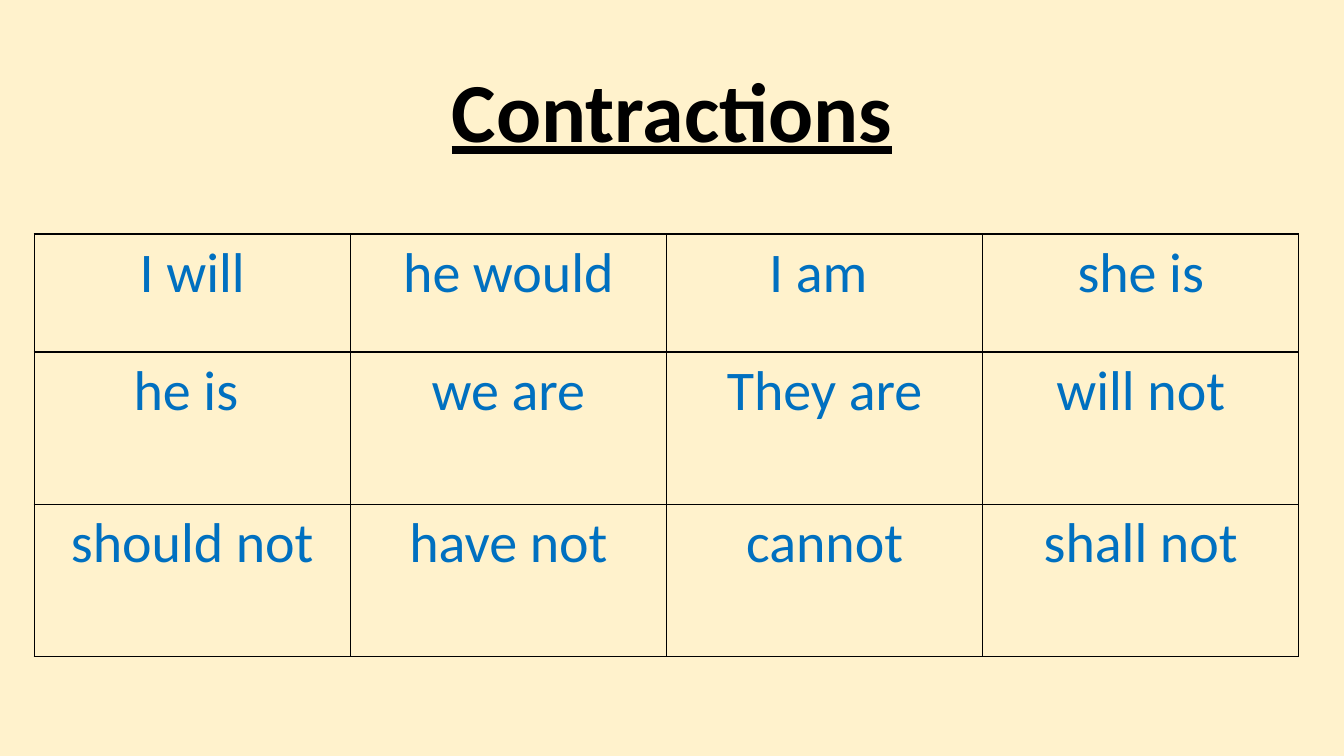
from lxml.etree import SubElement
from pptx import Presentation
from pptx.dml.color import RGBColor
from pptx.enum.text import MSO_AUTO_SIZE, PP_ALIGN
from pptx.oxml.ns import qn
from pptx.util import Pt

CREAM = RGBColor(0xFF, 0xF2, 0xCC)
BLACK = RGBColor(0x00, 0x00, 0x00)
BLUE = RGBColor(0x00, 0x70, 0xC0)

PHRASES = [
    ["I will", "he would", "I am ", "she is"],
    ["he is ", "we are", "They are", "will not"],
    ["should not", "have not", "cannot", "shall not"],
]
ROW_HEIGHTS = [84.2, 108.9, 108.9]


def write_centred(frame, words, size, color):
    para = frame.paragraphs[0]
    para.alignment = PP_ALIGN.CENTER
    span = para.add_run()
    span.text = words
    span.font.name = "Calibri"
    span.font.size = Pt(size)
    span.font.color.rgb = color
    return span


def add_title(page, left, top, width, height):
    box = page.shapes.add_textbox(Pt(left), Pt(top), Pt(width), Pt(height))
    box.text_frame.word_wrap = True
    box.text_frame.auto_size = MSO_AUTO_SIZE.SHAPE_TO_FIT_TEXT
    span = write_centred(box.text_frame, "Contractions", 60, BLACK)
    span.font.bold = True
    span.font.underline = True


def add_borders(cell):
    properties = cell._tc.get_or_add_tcPr()
    for side in ("lnL", "lnR", "lnT", "lnB"):
        line = SubElement(properties, qn(f"a:{side}"), w=str(Pt(1)))
        fill = SubElement(line, qn("a:solidFill"))
        SubElement(fill, qn("a:srgbClr"), val=str(BLACK))


def add_phrase_table(page, left, top, width):
    column_count = len(PHRASES[0])
    frame = page.shapes.add_table(
        len(PHRASES), column_count,
        Pt(left), Pt(top), Pt(width), Pt(sum(ROW_HEIGHTS)),
    )
    table = frame.table
    table.first_row = False
    table.horz_banding = False
    for column in table.columns:
        column.width = Pt(width / column_count)
    for row, height, phrases in zip(table.rows, ROW_HEIGHTS, PHRASES):
        row.height = Pt(height)
        for cell, phrase in zip(row.cells, phrases):
            add_borders(cell)
            cell.fill.solid()
            cell.fill.fore_color.rgb = CREAM
            write_centred(cell.text_frame, phrase, 40, BLUE)


def main():
    deck = Presentation()
    deck.slide_width = Pt(960)
    deck.slide_height = Pt(540)
    page = deck.slides.add_slide(deck.slide_layouts[6])
    page.background.fill.solid()
    page.background.fill.fore_color.rgb = CREAM
    add_title(page, 42, 38, 876, 80)
    add_phrase_table(page, 24.4, 167.2, 903.4)
    deck.save("out.pptx")


if __name__ == "__main__":
    main()
